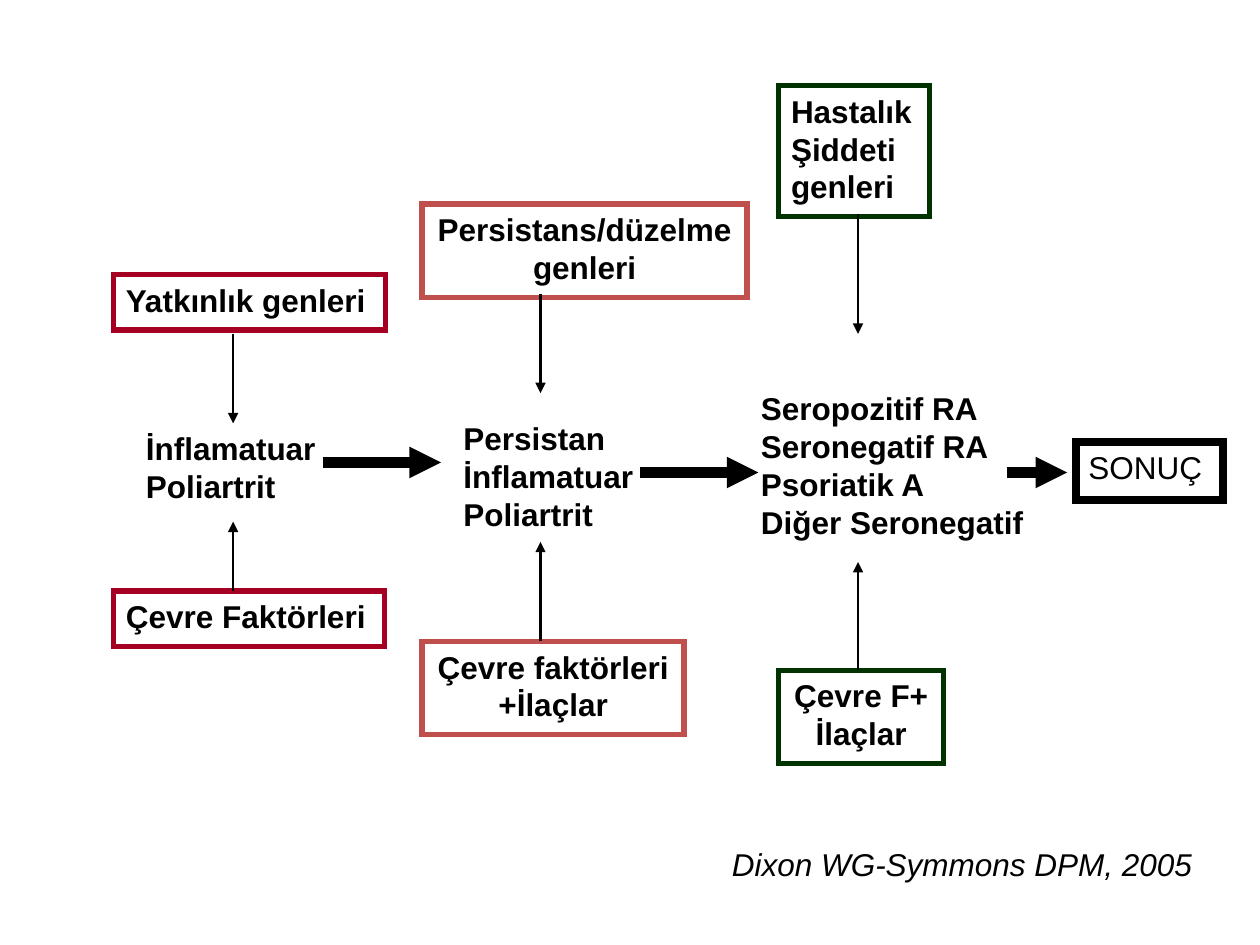
from lxml.etree import SubElement
from pptx import Presentation
from pptx.dml.color import RGBColor
from pptx.enum.shapes import MSO_CONNECTOR, MSO_SHAPE
from pptx.enum.text import MSO_ANCHOR, MSO_AUTO_SIZE, PP_ALIGN
from pptx.oxml.ns import qn
from pptx.util import Inches, Pt

BLACK = RGBColor(0x00, 0x00, 0x00)
CRIMSON = RGBColor(0xA5, 0x00, 0x21)
BRICK = RGBColor(0xC0, 0x50, 0x4D)
GREEN = RGBColor(0x00, 0x33, 0x00)
LEFT, CENTER = PP_ALIGN.LEFT, PP_ALIGN.CENTER

# Each stage: genes act from above, environment from below.
# Boxes are (lines, left, top, width, height, alignment); arrows are (start y, end y).
STAGES = [
    {
        "color": CRIMSON,
        "genes": (["Yatkınlık genleri"], 0.9, 2.18, 2.16, 0.44, LEFT),
        "disease": (["İnflamatuar", "Poliartrit"], 1.06, 3.36, 1.6, 0.7, LEFT),
        "environment": (["Çevre Faktörleri"], 0.9, 4.69, 2.15, 0.44, LEFT),
        "arrow_x": 1.85,
        "arrows": [(2.65, 3.36), (4.69, 4.14)],
    },
    {
        "color": BRICK,
        "genes": (["Persistans/düzelme", "genleri"], 3.35, 1.62, 2.58, 0.74, CENTER),
        "disease": (["Persistan", "İnflamatuar", "Poliartrit"], 3.58, 3.28, 1.6, 1, LEFT),
        "environment": (["Çevre faktörleri", "+İlaçlar"], 3.35, 5.09, 2.08, 0.74, CENTER),
        "arrow_x": 4.29,
        "arrows": [(2.33, 3.12), (5.09, 4.3)],
    },
    {
        "color": GREEN,
        "genes": (["Hastalık", "Şiddeti", "genleri"], 6.18, 0.68, 1.2, 1.04, LEFT),
        "disease": (["Seropozitif RA", "Seronegatif RA", "Psoriatik A", "Diğer Seronegatif"],
                    5.94, 3.04, 2.35, 1.3, LEFT),
        "environment": (["Çevre F+", "İlaçlar"], 6.18, 5.32, 1.31, 0.74, CENTER),
        "arrow_x": 6.81,
        "arrows": [(1.7, 2.65), (5.32, 4.46)],
    },
]
OUTCOME = (["SONUÇ"], 8.54, 3.51, 1.17, 0.46, LEFT)
CITATION = (["Dixon WG-Symmons DPM, 2005"], 5.71, 6.66, 3.95, 0.4, LEFT)
# Thick arrows between stages: (start x, end x, y)
PROGRESS = [(2.56, 3.5, 3.67), (5.08, 6.02, 3.75), (7.99, 8.47, 3.75)]


def add_label(page, label, bold=False, italic=False, outline=None, weight=3):
    lines, *bounds, alignment = label
    place = [Inches(value) for value in bounds]
    if outline is None:
        box = page.shapes.add_textbox(*place)
    else:
        box = page.shapes.add_shape(MSO_SHAPE.RECTANGLE, *place)
        box.shadow.inherit = False
        box.fill.background()
        box.line.color.rgb = outline
        box.line.width = Pt(weight)
        # Square corners
        SubElement(box.line._get_or_add_ln(), qn("a:miter"), lim="800000")
    frame = box.text_frame
    frame.word_wrap = False
    frame.auto_size = MSO_AUTO_SIZE.SHAPE_TO_FIT_TEXT
    frame.vertical_anchor = MSO_ANCHOR.TOP
    for index, line in enumerate(lines):
        para = frame.add_paragraph() if index else frame.paragraphs[0]
        para.alignment = alignment
        span = para.add_run()
        span.text = line
        font = span.font
        font.name, font.size = "Arial", Pt(18)
        font.bold, font.italic = bold, italic
        font.color.rgb = BLACK


def add_arrow(page, x1, y1, x2, y2, weight):
    ends = [Inches(value) for value in (x1, y1, x2, y2)]
    arrow = page.shapes.add_connector(MSO_CONNECTOR.STRAIGHT, *ends)
    arrow.line.color.rgb = BLACK
    arrow.line.width = Pt(weight)
    SubElement(arrow.line._get_or_add_ln(), qn("a:tailEnd"), type="triangle")
    SubElement(arrow._element.spPr, qn("a:effectLst"))


def main():
    deck = Presentation()
    deck.slide_width, deck.slide_height = Inches(10), Inches(7.5)
    page = deck.slides.add_slide(deck.slide_layouts[6])

    # Stages with their influences
    for stage in STAGES:
        add_label(page, stage["disease"], bold=True)
        for influence in ("genes", "environment"):
            add_label(page, stage[influence], bold=True, outline=stage["color"])
        for start, end in stage["arrows"]:
            add_arrow(page, stage["arrow_x"], start, stage["arrow_x"], end, 1.5)

    # Progress towards the outcome
    add_label(page, OUTCOME, outline=BLACK, weight=4.5)
    for start, end, y in PROGRESS:
        add_arrow(page, start, y, end, y, 6)

    # Citation
    add_label(page, CITATION, italic=True)
    deck.save("out.pptx")


if __name__ == "__main__":
    main()
